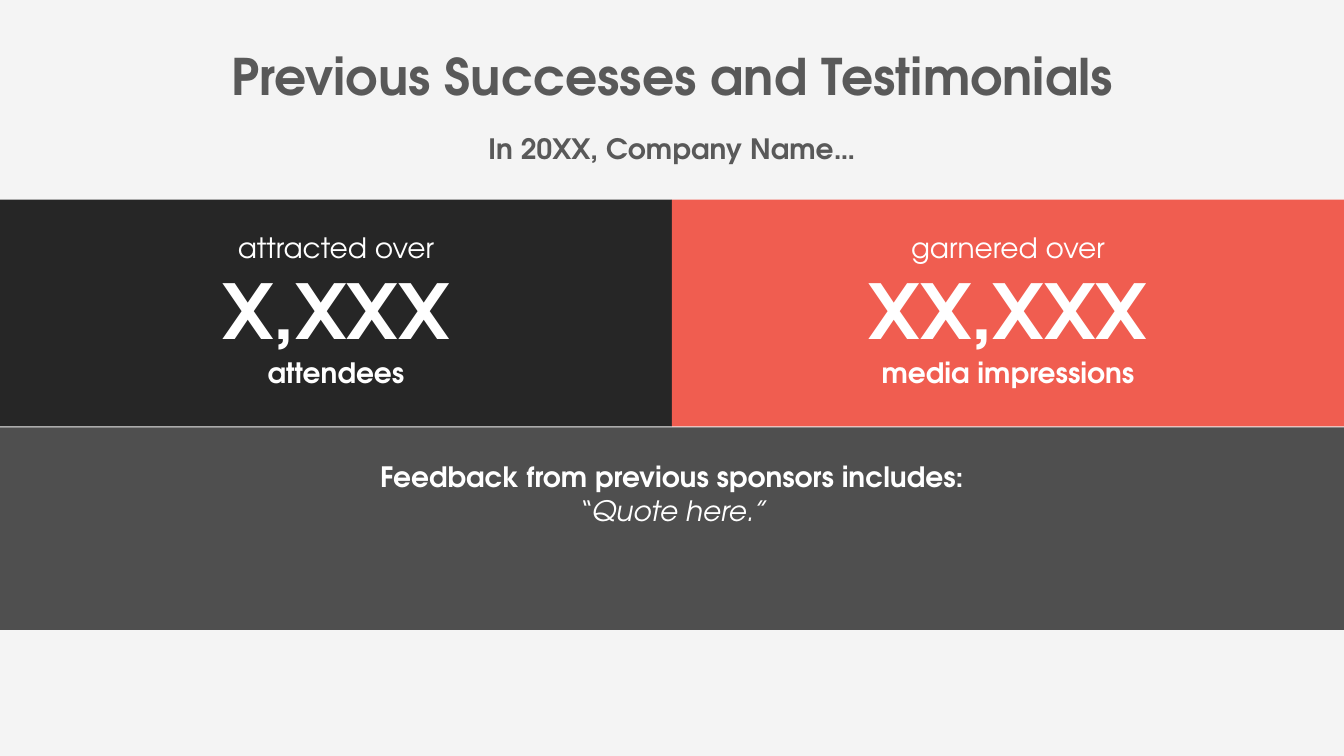
import dataclasses

import lxml.etree
import pptx
import pptx.dml.color
import pptx.enum.shapes
import pptx.enum.text
import pptx.oxml.ns
import pptx.shapes.autoshape
import pptx.slide
import pptx.text.text
import pptx.util

Inches = pptx.util.Inches
RGBColor = pptx.dml.color.RGBColor

FONT = "TeX Gyre Adventor"
PALE = RGBColor(0xF4, 0xF4, 0xF4)
GREY = RGBColor(0x59, 0x59, 0x59)
BLACK = RGBColor(0x26, 0x26, 0x26)
CORAL = RGBColor(0xF0, 0x5D, 0x50)
WHITE = RGBColor(0xFF, 0xFF, 0xFF)

PAGE_WIDTH = 13.33
HALF_WIDTH = PAGE_WIDTH / 2
STATS_TOP = 1.98
STATS_HEIGHT = 2.25


@dataclasses.dataclass(frozen=True)
class Area:
    left: float
    top: float
    width: float
    height: float

    def lengths(self) -> tuple[pptx.util.Length, ...]:
        return tuple(Inches(value) for value in dataclasses.astuple(self))


@dataclasses.dataclass(frozen=True)
class Line:
    text: str
    size: int = 20
    bold: bool = False
    italic: bool = False


@dataclasses.dataclass(frozen=True)
class Statistic:
    lead: str
    figure: str
    unit: str
    color: RGBColor


STATISTICS = [
    Statistic("attracted over", "X,XXX", "attendees", BLACK),
    Statistic("garnered over", "XX,XXX", "media impressions", CORAL),
]


def write_lines(frame: pptx.text.text.TextFrame, lines: list[Line], color: RGBColor) -> None:
    frame.word_wrap = True
    frame.auto_size = pptx.enum.text.MSO_AUTO_SIZE.NONE
    frame.vertical_anchor = pptx.enum.text.MSO_ANCHOR.TOP
    for index, line in enumerate(lines):
        paragraph = frame.add_paragraph() if index else frame.paragraphs[0]
        paragraph.text = line.text
        paragraph.alignment = pptx.enum.text.PP_ALIGN.CENTER
        paragraph.font.name = FONT
        paragraph.font.size = pptx.util.Pt(line.size)
        paragraph.font.bold = line.bold
        paragraph.font.italic = line.italic
        paragraph.font.color.rgb = color


def add_text(page: pptx.slide.Slide, area: Area, lines: list[Line], color: RGBColor) -> None:
    box = page.shapes.add_textbox(*area.lengths())
    write_lines(box.text_frame, lines, color)


def add_panel(page: pptx.slide.Slide, area: Area, color: RGBColor) -> pptx.shapes.autoshape.Shape:
    panel = page.shapes.add_shape(pptx.enum.shapes.MSO_SHAPE.RECTANGLE, *area.lengths())
    panel.shadow.inherit = False
    panel.fill.solid()
    panel.fill.fore_color.rgb = color
    panel.line.fill.background()
    return panel


def set_opacity(panel: pptx.shapes.autoshape.Shape, percent: int) -> None:
    color = panel.fill._xPr.find(".//" + pptx.oxml.ns.qn("a:srgbClr"))
    alpha = lxml.etree.SubElement(color, pptx.oxml.ns.qn("a:alpha"))
    alpha.set("val", str(percent * 1000))


def add_statistic(page: pptx.slide.Slide, left: float, statistic: Statistic) -> None:
    add_panel(page, Area(left, STATS_TOP, HALF_WIDTH, STATS_HEIGHT), statistic.color)
    lines = [
        Line(statistic.lead),
        Line(statistic.figure, size=54, bold=True),
        Line(statistic.unit, bold=True),
    ]
    add_text(page, Area(left, 2.24, HALF_WIDTH, 1.68), lines, WHITE)


def main() -> None:
    deck = pptx.Presentation()
    deck.slide_width, deck.slide_height = Inches(PAGE_WIDTH), Inches(7.5)
    page = deck.slides.add_slide(deck.slide_layouts.get_by_name("Title Only"))
    page.background.fill.solid()
    page.background.fill.fore_color.rgb = PALE

    title = page.shapes.title
    title.left, title.top, title.width, title.height = Area(1.71, 0.4, 9.91, 0.71).lengths()
    write_lines(title.text_frame, [Line("Previous Successes and Testimonials", 36, True)], GREY)
    add_text(page, Area(2.52, 1.26, 8.29, 0.44), [Line("In 20XX, Company Name…", bold=True)], GREY)

    feedback = add_panel(page, Area(0, 4.24, PAGE_WIDTH, 2.01), BLACK)
    set_opacity(feedback, 80)
    feedback_lines = [
        Line("Feedback from previous sponsors includes:", bold=True),
        Line("“Quote here.”", italic=True),
    ]
    add_text(page, Area(2.98, 4.51, 7.37, 0.77), feedback_lines, WHITE)

    for index, statistic in enumerate(STATISTICS):
        add_statistic(page, index * HALF_WIDTH, statistic)

    deck.save("out.pptx")


if __name__ == "__main__":
    main()
